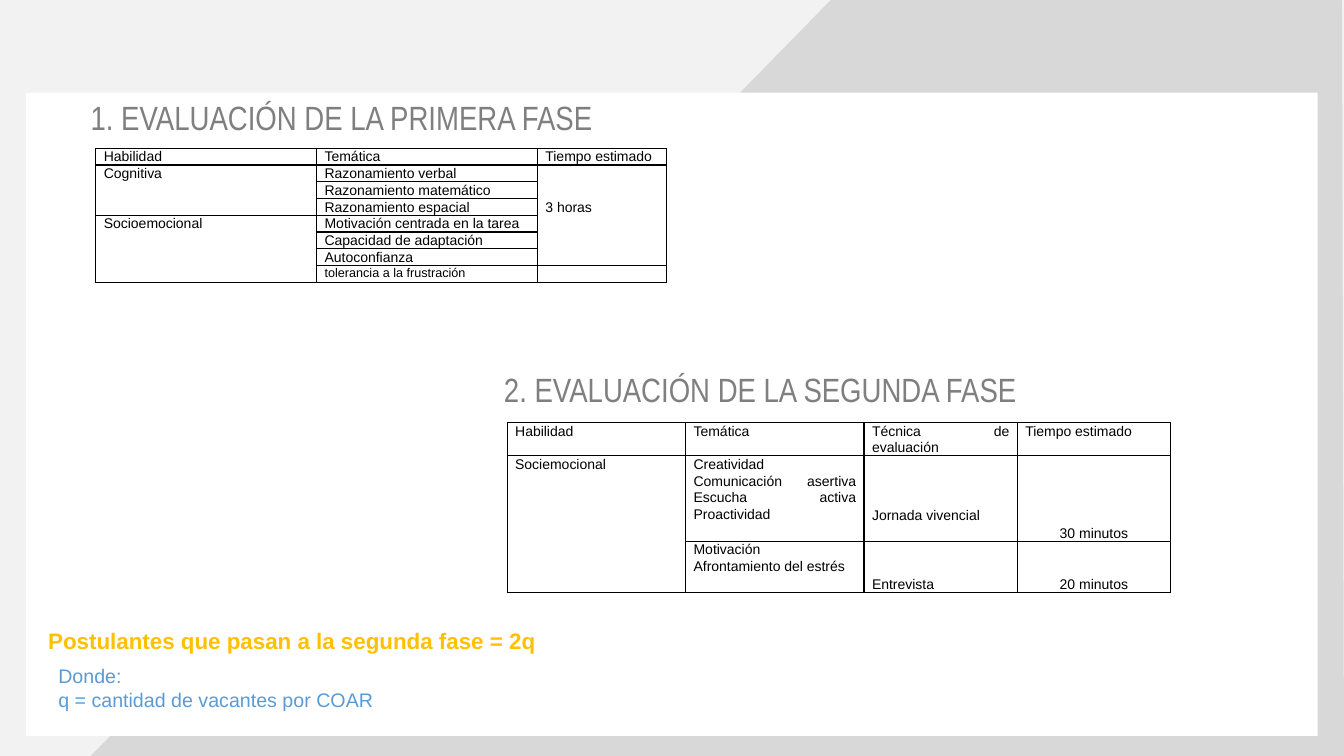
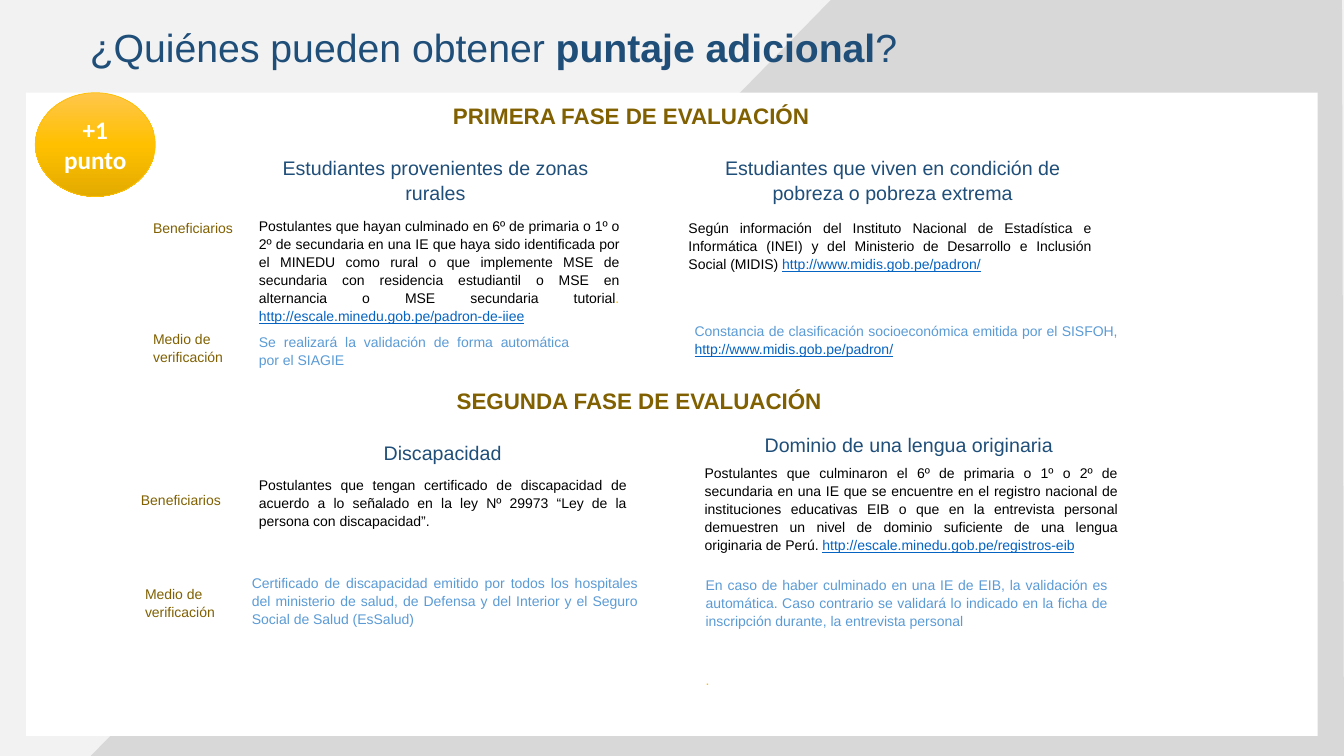
from copy import deepcopy

from lxml import etree
from pptx import Presentation
from pptx import util as u
from pptx.dml import color as dml
from pptx.enum import shapes, text
from pptx.oxml import ns

HUES = {
    "back": "F2F2F2", "band": "D8D8D8", "white": "FFFFFF", "black": "000000",
    "grey": "7F7F7F", "gold": "FFC000", "light": "FFC64B", "deep": "E3AB00",
    "sky": "5B9BD5", "navy": "1F4E79", "brown": "806000", "link": "0563C1",
}
LEFT, MID, JUST = text.PP_ALIGN.LEFT, text.PP_ALIGN.CENTER, text.PP_ALIGN.JUSTIFY
LINE = 0.17
PAD = 0.08


def rgb(name):
    return dml.RGBColor.from_string(HUES[name])


def paint(shape, name):
    shape.shadow.inherit = False
    shape.fill.solid()
    shape.fill.fore_color.rgb = rgb(name)
    shape.line.fill.background()


def add_run(para, words, size, hue, bold=False, under=False, face="Arial"):
    run = para.add_run()
    run.text = words
    font = run.font
    font.name, font.size, font.bold = face, u.Pt(size), bold
    font.color.rgb = rgb(hue)
    if under:
        font.underline = True


def add_para(frame, first, align, space=1.07, before=0):
    para = frame.paragraphs[0] if first else frame.add_paragraph()
    para.alignment, para.line_spacing = align, space
    if before:
        para.space_before = u.Pt(before)
    return para


def add_text(slide, at, runs, size, align=LEFT, space=1.07, wrap=True):
    box = slide.shapes.add_textbox(*map(u.Inches, at))
    frame = box.text_frame
    frame.word_wrap = wrap
    para = add_para(frame, True, align, space)
    for words, hue, *style in runs:
        add_run(para, words, size, hue, "bold" in style, "under" in style)
    return frame


def add_head(slide, at, words):
    frame = add_text(slide, at, [], 24, space=0.9)
    frame.vertical_anchor = text.MSO_ANCHOR.MIDDLE
    add_run(frame.paragraphs[0], words, 24, "grey", face="Arial Narrow")


def add_label(slide, at, words):
    box = slide.shapes.add_shape(shapes.MSO_SHAPE.RECTANGLE, *map(u.Inches, at))
    paint(box, "white")
    box.text_frame.vertical_anchor = text.MSO_ANCHOR.TOP
    add_run(add_para(box.text_frame, True, LEFT), words, 10, "brown")


def add_badge(slide, at, words):
    badge = slide.shapes.add_shape(shapes.MSO_SHAPE.OVAL, *map(u.Inches, at))
    badge.shadow.inherit = False
    badge.fill.gradient()
    badge.fill.gradient_angle = 270
    stops = badge._element.spPr.find(".//" + ns.qn("a:gsLst"))
    stops.insert(1, deepcopy(stops[0]))
    stops[1].set("pos", "50000")
    for stop, hue in zip(badge.fill.gradient_stops, ("light", "gold", "deep")):
        stop.color.rgb = rgb(hue)
    badge.line.color.rgb = rgb("gold")
    badge.line.width = u.Pt(0.5)
    badge.text_frame.vertical_anchor = text.MSO_ANCHOR.MIDDLE
    para = add_para(badge.text_frame, True, MID, 1)
    add_run(para, words, 18, "white", True, face="Calibri")


def add_edges(cell):
    props = cell._tc.get_or_add_tcPr()
    for spot, side in enumerate("LRTB"):
        edge = etree.Element(ns.qn("a:ln" + side), w=str(u.Pt(1)))
        fill = etree.SubElement(edge, ns.qn("a:solidFill"))
        etree.SubElement(fill, ns.qn("a:srgbClr"), val=HUES["black"])
        props.insert(spot, edge)


def fill_cell(cell, lines, skip=0, align=JUST, size=10):
    cell.margin_top = u.Inches(skip * LINE)
    for spot, words in enumerate(lines):
        add_run(add_para(cell.text_frame, spot == 0, align), words, size, "black")


def add_grid(slide, at, cols, rows, merges, cells):
    shape = slide.shapes.add_table(
        len(rows), len(cols), *map(u.Inches, (*at, sum(cols), sum(rows))))
    table = shape.table
    table.first_row = table.horz_banding = False
    for col, wide in zip(table.columns, cols):
        col.width = u.Inches(wide)
    for row, tall in zip(table.rows, rows):
        row.height = u.Inches(tall)
    for cell in table.iter_cells():
        cell.fill.background()
        cell.margin_left = cell.margin_right = u.Inches(PAD)
        cell.margin_top = cell.margin_bottom = 0
        add_edges(cell)
        cell.text_frame.paragraphs[0]._p.get_or_add_endParaRPr().set("sz", "1000")
    for top, end, col in merges:
        table.cell(top, col).merge(table.cell(end, col))
    for (row, col), (lines, *more) in cells.items():
        fill_cell(table.cell(row, col), lines, *more)


def set_frame(layout, slide):
    layout.background.fill.solid()
    layout.background.fill.fore_color.rgb = rgb("back")
    draft = slide.shapes.build_freeform(u.Inches(0.89), u.Inches(7.51))
    draft.add_line_segments(
        [(u.Inches(x), u.Inches(y)) for x, y in ((8.24, 0), (13.31, 0), (13.33, 7.51))])
    band = draft.convert_to_shape()
    panel = slide.shapes.add_shape(
        shapes.MSO_SHAPE.RECTANGLE, *map(u.Inches, (0.26, 0.92, 12.81, 6.38)))
    for shape, hue in ((band, "band"), (panel, "white")):
        paint(shape, hue)
        layout.shapes._spTree.append(shape._element)


def draw_phases(slide):
    topics = ("Razonamiento verbal", "Razonamiento matemático",
              "Razonamiento espacial", "Motivación centrada en la tarea",
              "Capacidad de adaptación", "Autoconfianza")
    cells = {(row, 1): ([words],) for row, words in enumerate(topics, 1)}
    cells.update({
        (0, 0): (["Habilidad"],), (0, 1): (["Temática"],),
        (0, 2): (["Tiempo estimado"],), (1, 0): (["Cognitiva"],),
        (4, 0): (["Socioemocional"],), (1, 2): (["3 horas"], 2),
        (7, 1): (["tolerancia a la frustración"], 0, JUST, 9),
    })
    add_grid(slide, (0.95, 1.47), (2.19, 2.19, 1.28), [0.16] * 8,
             [(1, 3, 0), (4, 7, 0), (1, 6, 2)], cells)

    heads = ("Habilidad", "Temática", "Técnica de evaluación", "Tiempo estimado")
    cells = {(0, col): ([words],) for col, words in enumerate(heads)}
    cells.update({
        (1, 0): (["Sociemocional"],),
        (1, 1): (["Creatividad",
                  "Comunicación asertiva Escucha activa Proactividad"],),
        (1, 2): (["Jornada vivencial"], 3),
        (1, 3): (["30 minutos"], 4, MID),
        (2, 1): (["Motivación", "Afrontamiento del estrés"],),
        (2, 2): (["Entrevista"], 2),
        (2, 3): (["20 minutos"], 2, MID),
    })
    add_grid(slide, (5.03, 4.19), (1.77, 1.77, 1.52, 1.52), (0.33, 0.83, 0.5),
             [(1, 2, 0)], cells)

    add_head(slide, (0.8, 0.9, 8.69, 0.58), "1. EVALUACIÓN DE LA PRIMERA FASE")
    add_head(slide, (4.9, 3.59, 6.2, 0.58), "2. EVALUACIÓN DE LA SEGUNDA FASE")
    add_text(slide, (0.38, 6.17, 5.1, 0.37),
             [("Postulantes que pasan a la segunda fase = 2q", "gold", "bold")],
             16, space=1, wrap=False)
    frame = add_text(slide, (0.48, 6.54, 3.34, 0.57), [("Donde:", "sky")],
                     14, space=1, wrap=False)
    add_run(add_para(frame, False, LEFT, 1),
            "q = cantidad de vacantes por COAR", 14, "sky")


def draw_bonus(slide):
    add_text(slide, (0.12, 0.15, 9.55, 0.58),
             [("¿Quiénes pueden obtener ", "navy"),
              ("puntaje adicional", "navy", "bold"), ("?", "navy")], 28, MID)

    for at, words in (
            ((1.34, 0.95, 9.84, 0.36), "PRIMERA FASE DE EVALUACIÓN"),
            ((1.42, 3.77, 9.84, 0.36), "SEGUNDA FASE DE EVALUACIÓN")):
        add_text(slide, at, [(words, "brown", "bold")], 16, MID)

    for at, words in (
            ((2.4, 1.48, 3.84, 0.48), "Estudiantes provenientes de zonas rurales"),
            ((6.79, 1.48, 4.13, 0.64),
             "Estudiantes que viven en condición de pobreza o pobreza extrema"),
            ((2.53, 4.31, 3.72, 0.51), "Discapacidad"),
            ((6.95, 4.23, 4.13, 0.51), "Dominio de una lengua originaria")):
        add_text(slide, at, [(words, "navy")], 14, MID)

    for at, words in (
            ((1.42, 2.12, 1.11, 0.25), "Beneficiarios"),
            ((1.42, 3.22, 1.11, 0.42), "Medio de verificación"),
            ((1.3, 4.82, 1.04, 0.25), "Beneficiarios"),
            ((1.34, 5.75, 0.93, 0.42), "Medio de verificación")):
        add_label(slide, at, words)

    census = ("http://www.midis.gob.pe/padron/", "link", "under")
    for at, *runs in (
            ((2.47, 2.1, 3.77, 1.13),
             ("Postulantes que hayan culminado en 6º de primaria o 1º o 2º de "
              "secundaria en una IE que haya sido identificada por el MINEDU como "
              "rural o que implemente MSE de secundaria con residencia estudiantil "
              "o MSE en alternancia o MSE secundaria tutorial", "black"),
             (". ", "gold"),
             ("http://escale.minedu.gob.pe/padron-de-iiee", "link", "under")),
            ((6.73, 2.12, 4.19, 0.99),
             ("Según información del Instituto Nacional de Estadística e "
              "Informática (INEI) y del Ministerio de Desarrollo e Inclusión "
              "Social (MIDIS) ", "black"), census),
            ((2.47, 3.25, 3.27, 0.36),
             ("Se realizará la validación de forma automática por el SIAGIE", "sky")),
            ((6.79, 3.14, 4.39, 0.55),
             ("Constancia de clasificación socioeconómica emitida por el SISFOH, ",
              "sky"), census),
            ((2.47, 4.67, 3.84, 0.69),
             ("Postulantes que tengan certificado de discapacidad de acuerdo a lo "
              "señalado en la ley Nº 29973 “Ley de la persona con discapacidad”.",
              "black")),
            ((6.89, 4.55, 4.29, 1.02),
             ("Postulantes que culminaron el 6º de primaria o 1º o 2º de secundaria "
              "en una IE que se encuentre en el registro nacional de instituciones "
              "educativas EIB o que en la entrevista personal demuestren un nivel "
              "de dominio suficiente de una lengua originaria de Perú. ", "black"),
             ("http://escale.minedu.gob.pe/registros-eib", "link", "under")),
            ((2.4, 5.64, 4.02, 0.54),
             ("Certificado de discapacidad emitido por todos los hospitales del "
              "ministerio de salud, de Defensa y del Interior y el Seguro Social de "
              "Salud (EsSalud)", "sky"))):
        add_text(slide, at, runs, 10, JUST)

    frame = add_text(
        slide, (6.9, 5.66, 4.18, 1.18),
        [("En caso de haber culminado en una IE de EIB, la validación es "
          "automática. Caso contrario se validará lo indicado en la ficha de "
          "inscripción durante, la entrevista personal", "sky")], 10, JUST)
    add_run(add_para(frame, False, JUST, before=29), ".", 10, "gold")
    add_badge(slide, (0.35, 0.92, 1.19, 1.03), "+1 punto")


def main():
    deck = Presentation()
    deck.slide_width, deck.slide_height = u.Inches(13.33), u.Inches(7.5)
    blank = deck.slide_layouts[6]
    first, second = (deck.slides.add_slide(blank) for _ in range(2))
    set_frame(blank, first)
    draw_phases(first)
    draw_bonus(second)
    deck.save("out.pptx")


if __name__ == "__main__":
    main()
